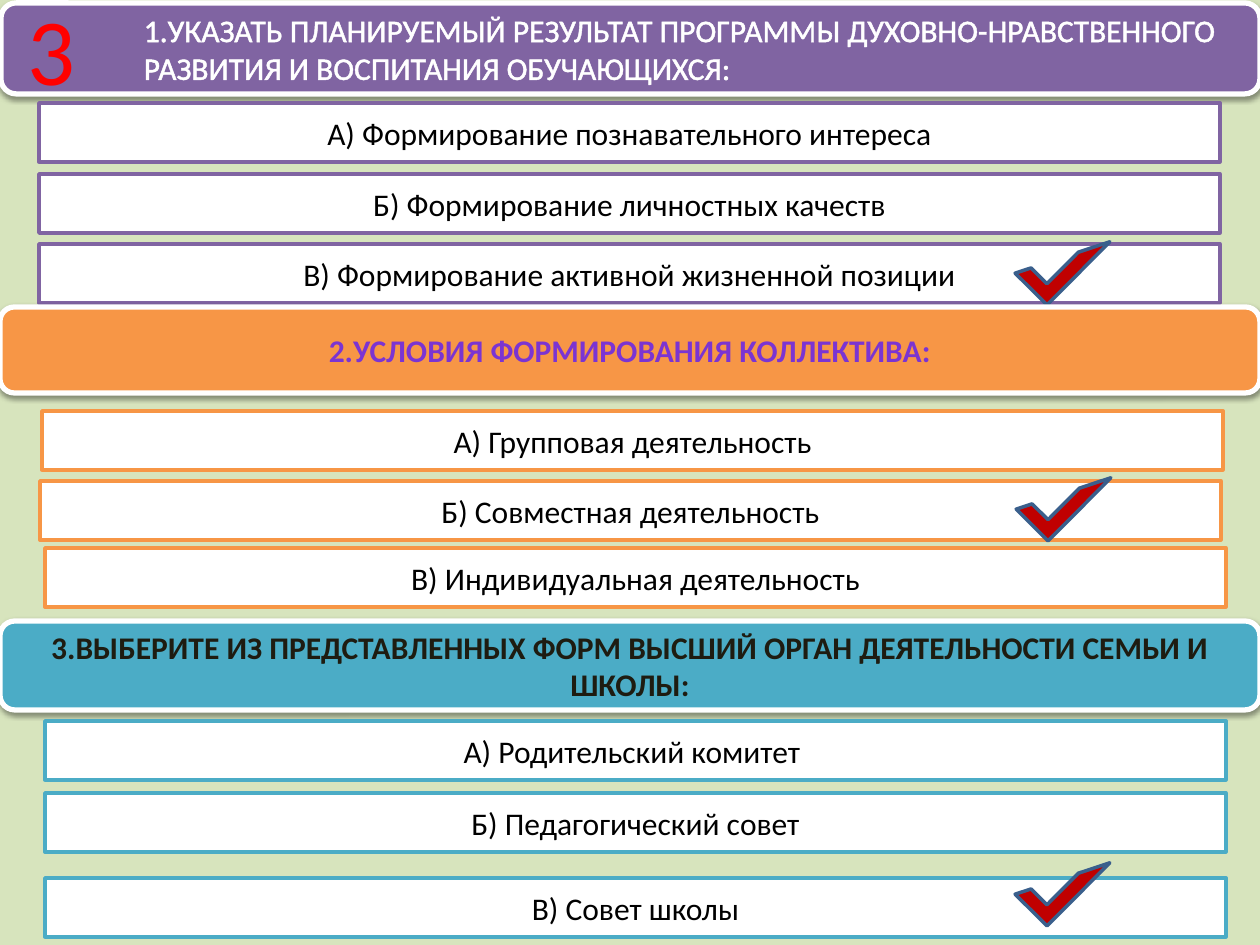
"""Build a quiz slide with three questions, their answers and ticks on the right ones."""
from pptx import Presentation
from pptx.dml.color import RGBColor
from pptx.enum.shapes import MSO_SHAPE as SHAPE
from pptx.enum.text import MSO_ANCHOR as ANCHOR, PP_ALIGN as ALIGN
from pptx.oxml import parse_xml
from pptx.util import Pt

PX = 914400 / 126
NS = 'xmlns:a="http://schemas.openxmlformats.org/drawingml/2006/main"'
SHADOW = (f'<a:effectLst {NS}><a:outerShdw blurRad="40000" dist="20000" dir="5400000" rotWithShape="0">'
          '<a:srgbClr val="000000"><a:alpha val="38000"/></a:srgbClr></a:outerShdw></a:effectLst>')
STOPS = [(0, "3D1B67"), (43, "7B34D2"), (48, "7330C4"), (100, "3D1B67")]
WHITE, TICK, TICK_LINE = "FFFFFF", "C00000", "3A5F8C"

QUESTIONS = [
    ("1.УКАЗАТЬ ПЛАНИРУЕМЫЙ РЕЗУЛЬТАТ ПРОГРАММЫ ДУХОВНО-НРАВСТВЕННОГО РАЗВИТИЯ И ВОСПИТАНИЯ ОБУЧАЮЩИХСЯ:",
     (1, 3, 1259, 91), "8064A2", WHITE, (WHITE, 1.45), (1040, 213),
     [(39, 103, "А) Формирование познавательного интереса"),
      (39, 174, "Б) Формирование личностных качеств"),
      (39, 244, "В) Формирование активной жизненной позиции")]),
    ("2.УСЛОВИЯ ФОРМИРОВАНИЯ КОЛЛЕКТИВА:",
     (0, 307, 1260, 86), "F79646", STOPS, ("5E457C", 0.71), (1041, 449),
     [(42, 411, "А) Групповая деятельность"),
      (40, 481, "Б) Совместная деятельность"),
      (45, 548, "В) Индивидуальная деятельность")]),
    ("3.ВЫБЕРИТЕ ИЗ ПРЕДСТАВЛЕННЫХ ФОРМ ВЫСШИЙ ОРГАН ДЕЯТЕЛЬНОСТИ СЕМЬИ И ШКОЛЫ:",
     (0, 621, 1260, 89), "4BACC6", "1E1C11", ("5E457C", 0.71), (1040, 834),
     [(45, 721, "А) Родительский комитет "),
      (45, 793, "Б) Педагогический совет"),
      (45, 878, "В) Совет школы")]),
]


def add_box(kind, box, fill, line, width):
    sp = slide.shapes.add_shape(kind, *[round(v * PX) for v in box])
    sp.shadow.inherit = False
    sp.fill.solid()
    sp.fill.fore_color.rgb = RGBColor.from_string(fill)
    sp.line.color.rgb = RGBColor.from_string(line)
    sp.line.width = Pt(width)
    return sp


def add_text(sp, text, color, size=18, bold=False, outline=None):
    p = sp.text_frame.paragraphs[0]
    p.alignment = ALIGN.CENTER
    r = p.add_run()
    r.text = text
    r.font.size, r.font.bold, r.font.name = Pt(size), bold, "Calibri"
    rPr = r.font._element if hasattr(r.font, "_element") else r._r.get_or_add_rPr()
    if isinstance(color, str):
        r.font.color.rgb = RGBColor.from_string(color)
    else:
        stops = "".join(f'<a:gs pos="{pos * 1000}"><a:srgbClr val="{c}"/></a:gs>' for pos, c in color)
        rPr.insert(0, parse_xml(f'<a:gradFill {NS}><a:gsLst>{stops}</a:gsLst><a:lin ang="5400000"/></a:gradFill>'))
    if outline:
        rPr.insert(0, parse_xml(f'<a:ln {NS} w="{Pt(outline[1])}"><a:solidFill>'
                                f'<a:srgbClr val="{outline[0]}"/></a:solidFill></a:ln>'))
    return p


prs = Presentation()
prs.slide_width, prs.slide_height = round(1260 * PX), round(945 * PX)
slide = prs.slides.add_slide(prs.slide_layouts[6])
slide.background.fill.solid()
slide.background.fill.fore_color.rgb = RGBColor.from_string("D7E4BD")

for n, (title, box, theme, color, outline, tick, answers) in enumerate(QUESTIONS):
    sp = add_box(SHAPE.ROUNDED_RECTANGLE, box, theme, WHITE, 3)
    spPr = sp._element.spPr
    spPr.replace(spPr[-1], parse_xml(SHADOW))
    sp.text_frame.vertical_anchor = ANCHOR.MIDDLE
    p = add_text(sp, title, color, bold=n > 0, outline=outline)
    if n == 0:
        p.alignment, p.level = ALIGN.LEFT, 2
    for x, y, answer in answers:
        sp = add_box(SHAPE.RECTANGLE, (x, y, 1181, 59), WHITE, theme, 2)
        sp.text_frame.vertical_anchor = ANCHOR.MIDDLE
        add_text(sp, answer, "000000")
    sp = add_box(SHAPE.HALF_FRAME, (*tick, 45, 89), TICK, TICK_LINE, 2)
    sp.rotation = 224.8

tb = slide.shapes.add_textbox(*[round(v * PX) for v in (15, -15, 74, 127)])
tb.text_frame.word_wrap = False
add_text(tb, "3", "FF0000", size=54, outline=(WHITE, 1.45))

prs.save("out.pptx")
